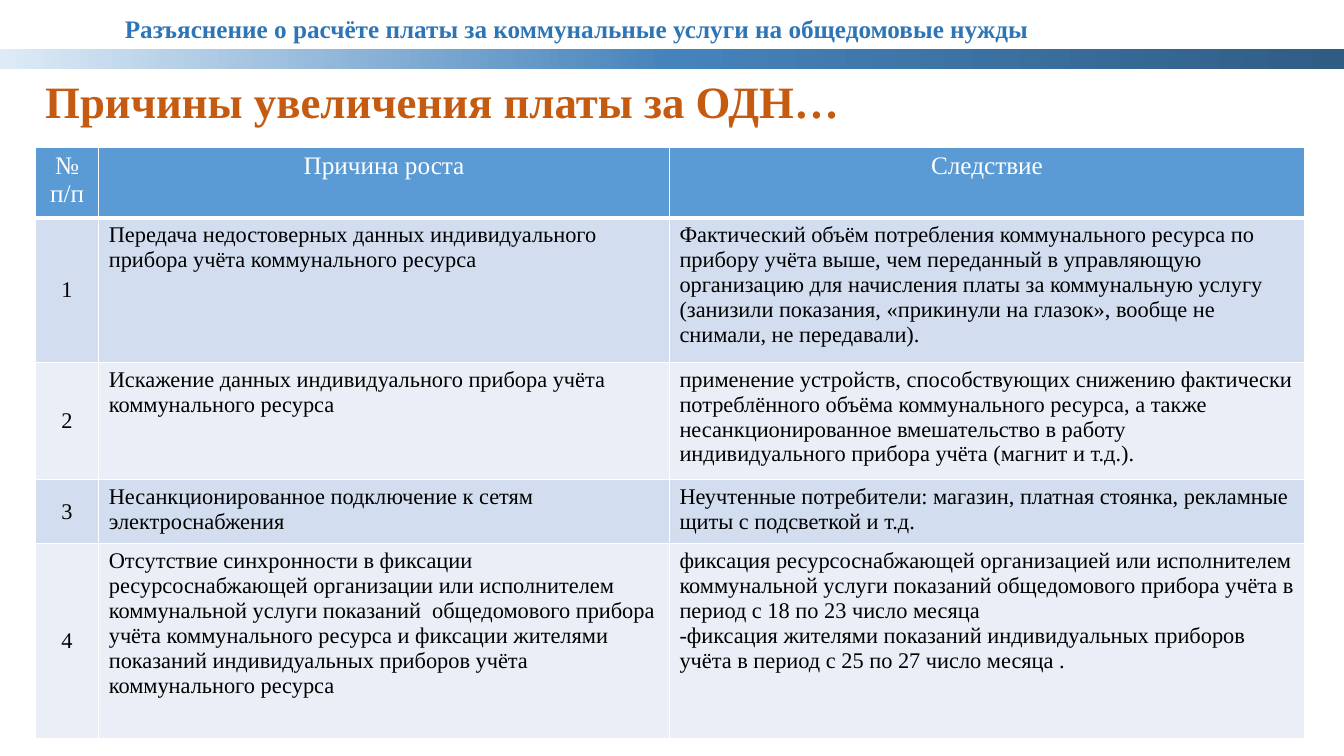
from copy import deepcopy

from lxml.etree import SubElement
from pptx import Presentation
from pptx.dml.color import RGBColor
from pptx.enum.shapes import MSO_SHAPE
from pptx.enum.text import MSO_ANCHOR, MSO_AUTO_SIZE, PP_ALIGN
from pptx.oxml.ns import qn
from pptx.util import Inches, Pt

FONT = "Times New Roman"
BAND_STOPS = [(0, "DEEBF7"), (0.5, "4583BB"), (1, "305C84")]
HEADER_FILL = "5B9BD5"
ROW_FILLS = ["D2DEEF", "EAEFF7"]
COLUMN_WIDTHS = [0.63, 5.66, 6.3]
ROW_HEIGHTS = [0.69, 1.4, 1.14, 0.62, 1.93]
HEADINGS = [["№", "п/п"], ["Причина роста"], ["Следствие"]]
REASONS = [
    (
        ["Передача недостоверных данных индивидуального прибора учёта коммунального ресурса"],
        ["Фактический объём потребления коммунального ресурса по прибору учёта выше, чем "
         "переданный в управляющую организацию для начисления платы за коммунальную услугу "
         "(занизили показания, «прикинули на глазок», вообще не снимали, не передавали)."],
    ),
    (
        ["Искажение данных индивидуального прибора учёта коммунального ресурса"],
        ["применение устройств, способствующих снижению фактически потреблённого объёма "
         "коммунального ресурса, а также несанкционированное вмешательство в работу "
         "индивидуального прибора учёта (магнит и т.д.)."],
    ),
    (
        ["Несанкционированное подключение к сетям электроснабжения"],
        ["Неучтенные потребители: магазин, платная стоянка, рекламные щиты с подсветкой и т.д."],
    ),
    (
        ["Отсутствие синхронности в фиксации ресурсоснабжающей организации или исполнителем "
         "коммунальной услуги показаний  общедомового прибора учёта коммунального ресурса и "
         "фиксации жителями показаний индивидуальных приборов учёта коммунального ресурса"],
        ["фиксация ресурсоснабжающей организацией или исполнителем коммунальной услуги "
         "показаний общедомового прибора учёта в период с 18 по 23 число месяца",
         "-фиксация жителями показаний индивидуальных приборов учёта в период с 25 по 27 "
         "число месяца ."],
    ),
]


def color(value):
    """Turn a hex string into a colour."""
    return RGBColor.from_string(value)


def write(frame, lines, size, ink, bold=False, align=PP_ALIGN.LEFT):
    """Fill a text frame with one paragraph per line."""
    for index, line in enumerate(lines):
        para = frame.add_paragraph() if index else frame.paragraphs[0]
        para.alignment = align
        span = para.add_run()
        span.text = line
        span.font.name = FONT
        span.font.size = Pt(size)
        span.font.bold = bold
        span.font.color.rgb = color(ink)


def add_heading(page, left, top, width, height, text, size, ink):
    """Add a bold one-line text box."""
    box = page.shapes.add_textbox(Inches(left), Inches(top), Inches(width), Inches(height))
    box.text_frame.word_wrap = True
    box.text_frame.auto_size = MSO_AUTO_SIZE.SHAPE_TO_FIT_TEXT
    write(box.text_frame, [text], size, ink, bold=True)


def add_band(page):
    """Add the gradient band across the slide."""
    band = page.shapes.add_shape(
        MSO_SHAPE.RECTANGLE, Inches(0), Inches(0.49), Inches(13.33), Inches(0.19))
    band.shadow.inherit = False
    band.line.fill.background()
    band.fill.gradient()
    band.fill.gradient_angle = 0
    stop_list = band.element.spPr.find(".//" + qn("a:gsLst"))
    stop_list.append(deepcopy(stop_list[0]))
    for stop, (position, value) in zip(band.fill.gradient_stops, BAND_STOPS):
        stop.position = position
        stop.color.rgb = color(value)


def add_borders(cell, top, bottom):
    """Draw white cell borders, with top and bottom widths in points."""
    properties = cell._tc.get_or_add_tcPr()
    for side, width in (("L", 1), ("R", 1), ("T", top), ("B", bottom)):
        line = SubElement(properties, qn(f"a:ln{side}"), w=str(Pt(width)))
        SubElement(SubElement(line, qn("a:solidFill")), qn("a:srgbClr"), val="FFFFFF")


def add_reason_table(page):
    """Add the table of reasons and consequences."""
    rows = [HEADINGS] + [[[str(number)], *reason] for number, reason in enumerate(REASONS, 1)]
    table = page.shapes.add_table(
        len(rows), len(COLUMN_WIDTHS), Inches(0.35), Inches(1.46),
        Inches(sum(COLUMN_WIDTHS)), Inches(sum(ROW_HEIGHTS))).table
    for column, width in zip(table.columns, COLUMN_WIDTHS):
        column.width = Inches(width)
    for row_index, (row, height) in enumerate(zip(rows, ROW_HEIGHTS)):
        table.rows[row_index].height = Inches(height)
        header = row_index == 0
        for column_index, lines in enumerate(row):
            cell = table.cell(row_index, column_index)
            add_borders(cell, 3 if row_index == 1 else 1, 3 if header else 1)
            cell.fill.solid()
            cell.fill.fore_color.rgb = color(HEADER_FILL if header else ROW_FILLS[(row_index - 1) % 2])
            centered = header or column_index == 0
            if centered and not header:
                cell.vertical_anchor = MSO_ANCHOR.MIDDLE
            write(cell.text_frame, lines, 18 if header else 16,
                  "FFFFFF" if header else "000000",
                  align=PP_ALIGN.CENTER if centered else PP_ALIGN.LEFT)


def main():
    """Build and save the slide."""
    deck = Presentation()
    deck.slide_width, deck.slide_height = Inches(13.33), Inches(7.5)
    page = deck.slides.add_slide(deck.slide_layouts[6])
    add_band(page)
    add_heading(page, 1.14, 0.08, 10.23, 0.4,
                "Разъяснение о расчёте платы за коммунальные услуги на общедомовые нужды",
                18, "2E75B6")
    add_heading(page, 0.35, 0.68, 9.58, 0.94, "Причины увеличения платы за ОДН…", 32, "C55A11")
    add_reason_table(page)
    deck.save("out.pptx")


if __name__ == "__main__":
    main()
